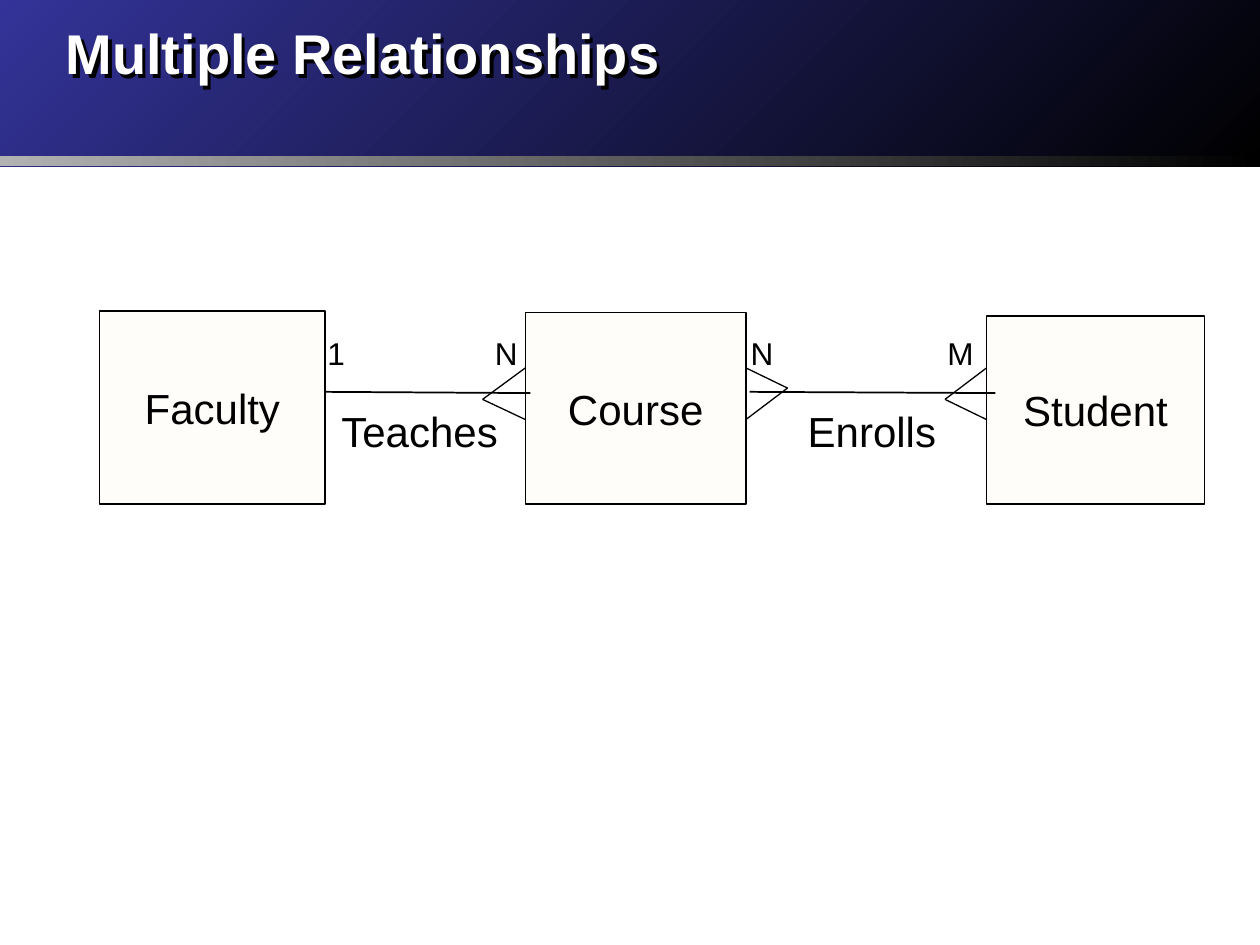
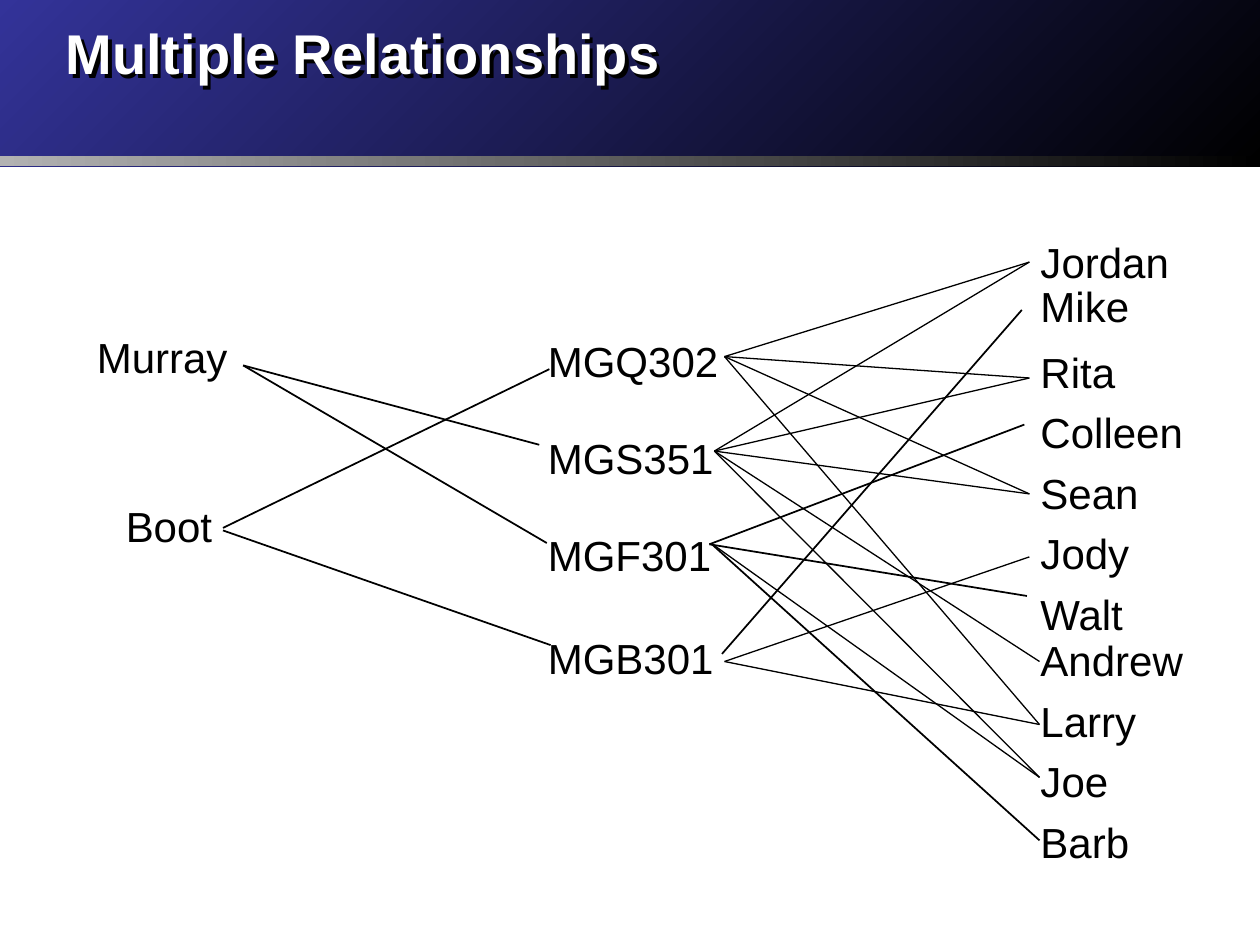
from typing import NamedTuple

from lxml import etree
from pptx import Presentation
from pptx.dml.color import RGBColor
from pptx.enum.shapes import MSO_CONNECTOR, MSO_SHAPE
from pptx.enum.text import MSO_ANCHOR, MSO_AUTO_SIZE, PP_ALIGN
from pptx.oxml.ns import qn
from pptx.util import Inches, Pt

RECTANGLE = MSO_SHAPE.RECTANGLE
STRAIGHT = MSO_CONNECTOR.STRAIGHT
TOP, MIDDLE = MSO_ANCHOR.TOP, MSO_ANCHOR.MIDDLE
LEFT, CENTER = PP_ALIGN.LEFT, PP_ALIGN.CENTER
FIXED_SIZE = MSO_AUTO_SIZE.NONE

FONT = "Arial"
COLORS = {
    "ink": "000000",
    "title": "FFFFFF",
    "entity": "FFFDF9",
    "band": "333399",
    "rule": "B2B2B2",
}
TITLE_ONLY = 5
HEAVY, THIN = 1, 0.75


class Band(NamedTuple):
    top: float
    height: float
    start: str
    angle: int


class Entity(NamedTuple):
    name: str
    left: float
    top: float
    width: float
    height: float


class Label(NamedTuple):
    text: str
    left: float
    top: float
    width: float
    size: int = 24
    align: PP_ALIGN = LEFT


class Point(NamedTuple):
    x: float
    y: float


class CrowFoot(NamedTuple):
    tip: Point
    entity_side: float


class Column(NamedTuple):
    """Names stacked from top at a fixed step."""
    left: float
    top: float
    step: float
    width: float
    names: list[str]


class Fan(NamedTuple):
    """Lines from one point to the line ends of several names."""
    origin: Point
    names: list[str]
    weight: float


BANDS = [Band(0, 1.32, "band", 315), Band(1.24, 0.08, "rule", 0)]

ENTITIES = [
    Entity("Faculty", 0.79, 2.47, 1.79, 1.53),
    Entity("Course", 4.17, 2.48, 1.75, 1.52),
    Entity("Student", 7.83, 2.51, 1.73, 1.49),
]
CARDINALITIES = [("1", 2.5), ("N", 3.83), ("N", 5.86), ("M", 7.42)]
RELATIONSHIPS = [("Teaches", 2.58), ("Enrolls", 6.17)]
RELATIONSHIP_LINES = [
    (Point(2.58, 3.11), Point(4.21, 3.12)),
    (Point(5.95, 3.11), Point(7.9, 3.12)),
]
CROW_FEET = [
    CrowFoot(Point(3.83, 3.17), 4.17),
    CrowFoot(Point(6.25, 3.08), 5.92),
    CrowFoot(Point(7.5, 3.17), 7.83),
]
TOE_HEIGHTS = (2.92, 3.33)

COLUMNS = [
    Column(0.67, 2.58, 0, 1.3, ["Murray"]),
    Column(0.9, 3.92, 0, 1, ["Boot"]),
    Column(4.25, 2.61, 0.77, 1.6, ["MGQ302", "MGS351", "MGF301"]),
    Column(4.25, 4.97, 0, 1.6, ["MGB301"]),
    Column(8.16, 1.83, 0.35, 1.7, ["Jordan", "Mike"]),
    Column(8.16, 2.7, 0.48, 1.7, ["Rita", "Colleen", "Sean", "Jody", "Walt"]),
    Column(8.16, 4.99, 0.48, 1.7, ["Andrew", "Larry", "Joe", "Barb"]),
]
LINE_ENDS = {
    "MGQ302": Point(4.36, 2.93),
    "MGS351": Point(4.28, 3.53),
    "MGF301": Point(4.34, 4.31),
    "MGB301": Point(4.37, 5.12),
    "Jordan": Point(8.17, 2.08),
    "Mike": Point(8.11, 2.46),
    "Rita": Point(8.17, 3),
    "Colleen": Point(8.13, 3.37),
    "Sean": Point(8.17, 3.92),
    "Jody": Point(8.17, 4.42),
    "Walt": Point(8.15, 4.73),
    "Andrew": Point(8.25, 5.25),
    "Larry": Point(8.25, 5.75),
    "Joe": Point(8.25, 6.17),
    "Barb": Point(8.25, 6.67),
}
FANS = [
    Fan(Point(1.93, 2.9), ["MGS351", "MGF301"], HEAVY),
    Fan(Point(1.77, 4.19), ["MGQ302"], HEAVY),
    Fan(Point(1.77, 4.21), ["MGB301"], HEAVY),
    Fan(Point(5.75, 2.83), ["Jordan", "Rita", "Sean", "Larry"], THIN),
    Fan(Point(5.67, 3.58), ["Jordan", "Rita", "Sean", "Andrew", "Joe"], THIN),
    Fan(Point(5.63, 4.32), ["Colleen", "Walt"], HEAVY),
    Fan(Point(5.65, 4.32), ["Barb"], HEAVY),
    Fan(Point(5.67, 4.33), ["Joe"], THIN),
    Fan(Point(5.73, 5.19), ["Mike"], HEAVY),
    Fan(Point(5.75, 5.25), ["Jody", "Larry"], THIN),
]


def color(name: str) -> RGBColor:
    return RGBColor.from_string(COLORS[name])


def write(frame, text: str, size: int, align: PP_ALIGN, ink: str = "ink"):
    para = frame.paragraphs[0]
    para.alignment = align
    span = para.add_run()
    span.text = text
    span.font.name = FONT
    span.font.size = Pt(size)
    span.font.color.rgb = color(ink)
    return span


def add_bands(page) -> None:
    """Draw the header bands and hand them to the layout all pages share."""
    for index, band in enumerate(BANDS):
        box = page.shapes.add_shape(
            RECTANGLE, 0, Inches(band.top), Inches(10), Inches(band.height))
        box.shadow.inherit = False
        box.line.fill.background()
        box.fill.gradient()
        box.fill.gradient_angle = band.angle
        for position, name in enumerate((band.start, "ink")):
            stop = box.fill.gradient_stops[position]
            stop.color.rgb = color(name)
            stop.position = position
        page.slide_layout.shapes.element.insert(2 + index, box.element)


def add_title(page, text: str) -> None:
    """Fill the title; with no fill, the shape's shadow falls from its letters."""
    title = page.shapes.title
    title.left, title.top = Inches(0.42), Inches(0.1)
    title.width, title.height = Inches(9.08), Inches(1)
    title.fill.background()
    effects = etree.SubElement(title.element.spPr, qn("a:effectLst"))
    shadow = etree.SubElement(effects, qn("a:outerShdw"), dist="35921",
                              dir="2700000", algn="ctr", rotWithShape="0")
    etree.SubElement(shadow, qn("a:srgbClr"), val=COLORS["ink"])
    frame = title.text_frame
    frame.auto_size = FIXED_SIZE
    frame.vertical_anchor = TOP
    write(frame, text, 32, LEFT, "title").font.bold = True


def add_entity(page, entity: Entity) -> None:
    box = page.shapes.add_shape(
        RECTANGLE, Inches(entity.left), Inches(entity.top),
        Inches(entity.width), Inches(entity.height))
    box.shadow.inherit = False
    box.fill.solid()
    box.fill.fore_color.rgb = color("entity")
    box.line.color.rgb = color("ink")
    box.line.width = Pt(HEAVY)
    box.text_frame.vertical_anchor = MIDDLE
    write(box.text_frame, entity.name, 24, CENTER)


def add_label(page, label: Label) -> None:
    box = page.shapes.add_textbox(
        Inches(label.left), Inches(label.top), Inches(label.width),
        Inches(0.5 if label.size > 18 else 0.4))
    box.text_frame.word_wrap = True
    write(box.text_frame, label.text, label.size, label.align)


def add_line(page, start: Point, end: Point, weight: float) -> None:
    line = page.shapes.add_connector(
        STRAIGHT, Inches(start.x), Inches(start.y), Inches(end.x), Inches(end.y))
    line.line.color.rgb = color("ink")
    line.line.width = Pt(weight)
    etree.SubElement(line.element.spPr, qn("a:effectLst"))


def draw_entity_diagram(page) -> None:
    for entity in ENTITIES:
        add_entity(page, entity)
    for text, left in CARDINALITIES:
        add_label(page, Label(text, left, 2.6, 0.7, 18))
    for text, left in RELATIONSHIPS:
        add_label(page, Label(text, left, 3.17, 1.5, align=CENTER))
    for start, end in RELATIONSHIP_LINES:
        add_line(page, start, end, HEAVY)
    for foot in CROW_FEET:
        for height in TOE_HEIGHTS:
            add_line(page, foot.tip, Point(foot.entity_side, height), THIN)


def draw_instances(page) -> None:
    for column in COLUMNS:
        for row, name in enumerate(column.names):
            top = column.top + row * column.step
            add_label(page, Label(name, column.left, top, column.width))
    for fan in FANS:
        for name in fan.names:
            add_line(page, fan.origin, LINE_ENDS[name], fan.weight)


def main() -> None:
    deck = Presentation()
    deck.slide_width, deck.slide_height = Inches(10), Inches(7.5)
    layout = deck.slide_layouts[TITLE_ONLY]
    for draw in (draw_entity_diagram, draw_instances):
        page = deck.slides.add_slide(layout)
        add_title(page, "Multiple Relationships")
        draw(page)
    add_bands(deck.slides[0])
    deck.save("out.pptx")


if __name__ == "__main__":
    main()
